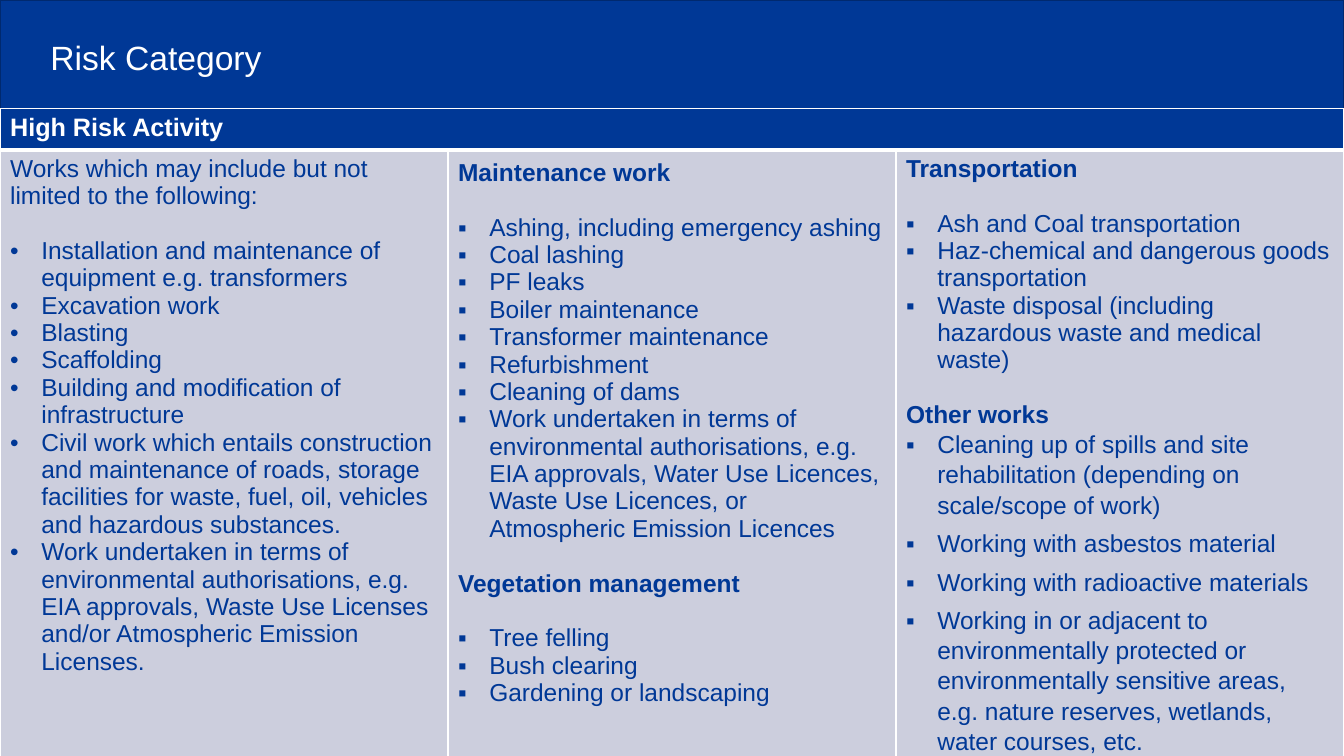
import pptx
import pptx.util
import pptx.dml.color
import pptx.enum.shapes
import pptx.enum.text
import pptx.oxml.ns
from lxml import etree

Inches = pptx.util.Inches
Pt = pptx.util.Pt
RGBColor = pptx.dml.color.RGBColor
ALIGN = pptx.enum.text.PP_ALIGN
ANCHOR = pptx.enum.text.MSO_ANCHOR
qn = pptx.oxml.ns.qn

BLUE = RGBColor(0x00, 0x38, 0x96)
NAVY = RGBColor(0x00, 0x29, 0x6F)
GREY = RGBColor(0xCC, 0xCE, 0xDD)
WHITE = RGBColor(0xFF, 0xFF, 0xFF)

WIDE, TALL, BAND, HEAD = 13.33, 7.5, 1.08, 0.41
INDENT = Inches(0.31)
GAP = Pt(19.5)

PLAIN = {"name": "Arial", "size": Pt(17.5), "bold": False}
BOLD = {**PLAIN, "bold": True}
TITLE = {**PLAIN, "size": Pt(24)}
LABEL = {**BOLD, "size": Pt(18)}

TOPIC = {"alignment": ALIGN.JUSTIFY}
FIRST = {**TOPIC, "line_spacing": 1.15}
LOOSE = {"line_spacing": 1.1, "space_after": Pt(6)}

WORKS = [
    ("Works which may include but not limited to the following:", PLAIN, {}, [
        "Installation and maintenance of equipment e.g. transformers",
        "Excavation work",
        "Blasting",
        "Scaffolding",
        "Building and modification of infrastructure",
        "Civil work which entails construction and maintenance of roads, storage "
        "facilities for waste, fuel, oil, vehicles and hazardous substances.",
        "Work undertaken in terms of environmental authorisations, e.g. EIA approvals, "
        "Waste Use Licenses and/or Atmospheric Emission Licenses.",
    ], {}, GAP),
]
UPKEEP = [
    ("Maintenance work", BOLD, FIRST, [
        "Ashing, including emergency ashing",
        "Coal lashing",
        "PF leaks",
        "Boiler maintenance",
        "Transformer maintenance",
        "Refurbishment",
        "Cleaning of dams",
        "Work undertaken in terms of environmental authorisations, e.g. EIA approvals, "
        "Water Use Licences, Waste Use Licences, or Atmospheric Emission Licences",
    ], {}, GAP),
    ("Vegetation management", BOLD, TOPIC, [
        "Tree felling",
        "Bush clearing",
        "Gardening or landscaping",
    ], {}, GAP),
]
OTHERS = [
    ("Transportation", BOLD, TOPIC, [
        "Ash and Coal transportation",
        "Haz-chemical and dangerous goods transportation",
        "Waste disposal (including hazardous waste and medical waste)",
    ], {}, GAP),
    ("Other works", BOLD, TOPIC, [
        "Cleaning up of spills and site rehabilitation (depending on scale/scope of work)",
        "Working with asbestos material",
        "Working with radioactive materials",
        "Working in or adjacent to environmentally protected or environmentally sensitive "
        "areas, e.g. nature reserves, wetlands, water courses, etc.",
    ], LOOSE, Pt(0)),
]
COLUMNS = [("•", WORKS), ("▪", UPKEEP), ("▪", OTHERS)]


def apply(item, values):
    for name, value in values.items():
        setattr(item, name, value)


def write(para, text, font, color, values):
    apply(para, values)
    run = para.add_run()
    run.text = text
    apply(run.font, font)
    run.font.color.rgb = color


def bullet(para, mark):
    props = para._p.get_or_add_pPr()
    props.set("marL", str(INDENT))
    props.set("indent", str(-INDENT))
    etree.SubElement(props, qn("a:buFont")).set("typeface", "Arial")
    etree.SubElement(props, qn("a:buChar")).set("char", mark)


def paint(cell, color, top, bottom):
    props = cell._tc.get_or_add_tcPr()
    for side, width in {"L": 1, "R": 1, "T": top, "B": bottom}.items():
        line = etree.SubElement(props, qn("a:ln" + side), w=str(Pt(width)))
        fill = etree.SubElement(line, qn("a:solidFill"))
        etree.SubElement(fill, qn("a:srgbClr")).set("val", str(WHITE))
    cell.fill.solid()
    cell.fill.fore_color.rgb = color


def banner(slide, left, top, width, height):
    bar = slide.shapes.add_shape(
        pptx.enum.shapes.MSO_SHAPE.RECTANGLE,
        Inches(left), Inches(top), Inches(width), Inches(height))
    bar.shadow.inherit = False
    bar.fill.solid()
    bar.fill.fore_color.rgb = BLUE
    bar.line.color.rgb = NAVY
    bar.line.width = Pt(1)
    title = slide.shapes.title
    title.element.addprevious(bar.element)
    apply(title, {"left": Inches(left + 0.4), "top": Inches(top + 0.23),
                  "width": Inches(10.4), "height": Inches(0.73)})
    title.text_frame.vertical_anchor = ANCHOR.MIDDLE
    write(title.text_frame.paragraphs[0], "Risk Category", TITLE, WHITE,
          {"alignment": ALIGN.LEFT, "line_spacing": 0.9})


def column(cell, mark, groups):
    frame = cell.text_frame
    for index, (topic, font, form, items, style, gap) in enumerate(groups):
        para = frame.add_paragraph() if index else frame.paragraphs[0]
        lead = {"space_before": GAP} if index else {}
        write(para, topic, font, BLUE, {**form, **lead})
        for order, text in enumerate(items):
            para = frame.add_paragraph()
            bullet(para, mark)
            lead = {} if order else {"space_before": gap}
            write(para, text, PLAIN, BLUE, {**style, **lead})


def grid(slide, left, top, width, height):
    table = slide.shapes.add_table(
        2, len(COLUMNS), Inches(left), Inches(top), Inches(width), Inches(height)).table
    for row, size in zip(table.rows, (HEAD, height - HEAD)):
        row.height = Inches(size)
    for index, (mark, groups) in enumerate(COLUMNS):
        table.columns[index].width = Inches(width / len(COLUMNS))
        paint(table.cell(0, index), BLUE, 1, 3)
        paint(table.cell(1, index), GREY, 3, 1)
        column(table.cell(1, index), mark, groups)
    head = table.cell(0, 0)
    head.merge(table.cell(0, len(COLUMNS) - 1))
    write(head.text_frame.paragraphs[0], "High Risk Activity", LABEL, WHITE, {})


def main():
    deck = pptx.Presentation()
    apply(deck, {"slide_width": Inches(WIDE), "slide_height": Inches(TALL)})
    slide = deck.slides.add_slide(deck.slide_layouts[5])
    banner(slide, 0, 0, WIDE, BAND)
    grid(slide, 0, BAND, WIDE, TALL - BAND)
    deck.save("out.pptx")


if __name__ == "__main__":
    main()
